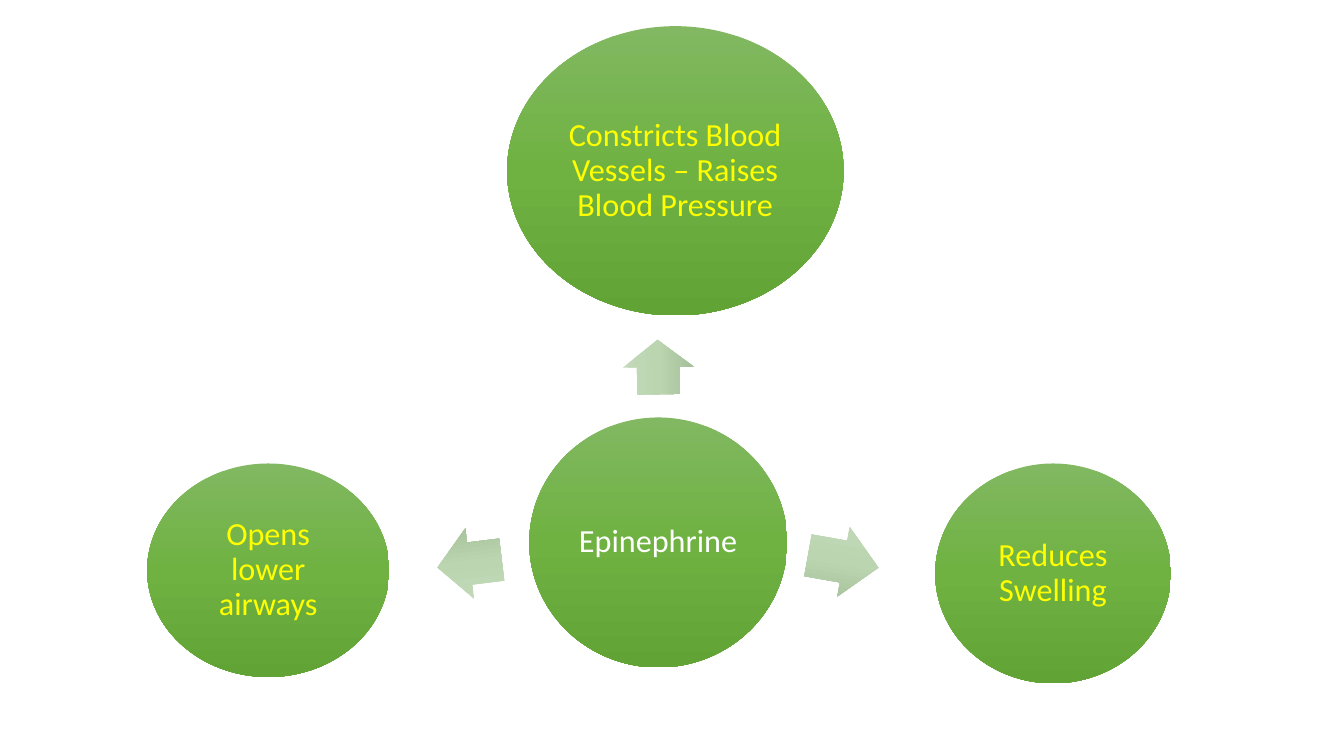
"""Build a slide showing the three effects of epinephrine."""

import copy
from dataclasses import dataclass

import pptx
import pptx.dml.color
import pptx.enum.shapes
import pptx.enum.text
import pptx.oxml.ns
import pptx.shapes.autoshape
import pptx.slide
import pptx.util

Cm = pptx.util.Cm


@dataclass(frozen=True)
class Theme:
    circle_gradient: tuple[str, ...] = ("81B861", "6FB242", "62A336")
    arrow_gradient: tuple[str, ...] = ("C4D9BB", "BAD5AF", "A5BF9A")
    center_text: str = "FFFFFF"
    effect_text: str = "FFFF00"
    font: str = "Calibri"
    text_size: int = 23


@dataclass(frozen=True)
class Circle:
    text: str
    left: float
    top: float
    width: float
    height: float
    text_color: str


@dataclass(frozen=True)
class Arrow:
    left: float
    top: float
    length: float
    rotation: float


THEME = Theme()
ARROW_THICKNESS = 1.78
TEXT_INSET = 0.08

CIRCLES = (
    Circle("Epinephrine", 13.34, 10.52, 6.5, 6.3, THEME.center_text),
    Circle("Constricts Blood Vessels – Raises Blood Pressure",
           12.78, 0.66, 8.48, 7.29, THEME.effect_text),
    Circle("Opens lower airways", 3.71, 11.68, 6.1, 5.38, THEME.effect_text),
    Circle("Reduces Swelling", 23.57, 11.68, 5.94, 5.54, THEME.effect_text),
)

ARROWS = (
    Arrow(15.9, 8.36, 1.37, 269),
    Arrow(20.35, 13.26, 1.8, 10),
    Arrow(11.02, 13.31, 1.63, 173),
)


def style_shape(shape: pptx.shapes.autoshape.Shape, colors: tuple[str, ...]) -> None:
    """Give the shape a three-stop downward gradient without line or shadow."""
    shape.shadow.inherit = False
    shape.line.fill.background()
    shape.fill.gradient()
    shape.fill.gradient_angle = 270
    stop_list = next(shape.element.iter(pptx.oxml.ns.qn("a:gsLst")))
    stop_list.insert(1, copy.deepcopy(stop_list[0]))
    for index, (stop, color) in enumerate(zip(shape.fill.gradient_stops, colors)):
        stop.position = index / (len(colors) - 1)
        stop.color.rgb = pptx.dml.color.RGBColor.from_string(color)


def add_circle(slide: pptx.slide.Slide, circle: Circle) -> None:
    """Draw an ellipse with its centred label."""
    shape = slide.shapes.add_shape(
        pptx.enum.shapes.MSO_SHAPE.OVAL,
        Cm(circle.left), Cm(circle.top), Cm(circle.width), Cm(circle.height),
    )
    style_shape(shape, THEME.circle_gradient)
    text_frame = shape.text_frame
    text_frame.text = circle.text
    text_frame.word_wrap = True
    text_frame.vertical_anchor = pptx.enum.text.MSO_ANCHOR.MIDDLE
    text_frame.margin_left = text_frame.margin_right = Cm(TEXT_INSET)
    text_frame.margin_top = text_frame.margin_bottom = Cm(TEXT_INSET)
    paragraph = text_frame.paragraphs[0]
    paragraph.alignment = pptx.enum.text.PP_ALIGN.CENTER
    paragraph.line_spacing = 0.9
    font = paragraph.runs[0].font
    font.name = THEME.font
    font.size = pptx.util.Pt(THEME.text_size)
    font.color.rgb = pptx.dml.color.RGBColor.from_string(circle.text_color)


def add_arrow(slide: pptx.slide.Slide, arrow: Arrow) -> None:
    """Draw a block arrow turned towards its effect."""
    shape = slide.shapes.add_shape(
        pptx.enum.shapes.MSO_SHAPE.RIGHT_ARROW,
        Cm(arrow.left), Cm(arrow.top), Cm(arrow.length), Cm(ARROW_THICKNESS),
    )
    shape.adjustments[0] = 0.6
    shape.adjustments[1] = 0.5
    shape.rotation = arrow.rotation
    style_shape(shape, THEME.arrow_gradient)


def main() -> None:
    """Create the presentation and save it."""
    presentation = pptx.Presentation()
    presentation.slide_width = Cm(33.87)
    presentation.slide_height = Cm(19.05)
    slide = presentation.slides.add_slide(presentation.slide_layouts[6])
    for circle in CIRCLES:
        add_circle(slide, circle)
    for arrow in ARROWS:
        add_arrow(slide, arrow)
    presentation.save("out.pptx")


if __name__ == "__main__":
    main()
